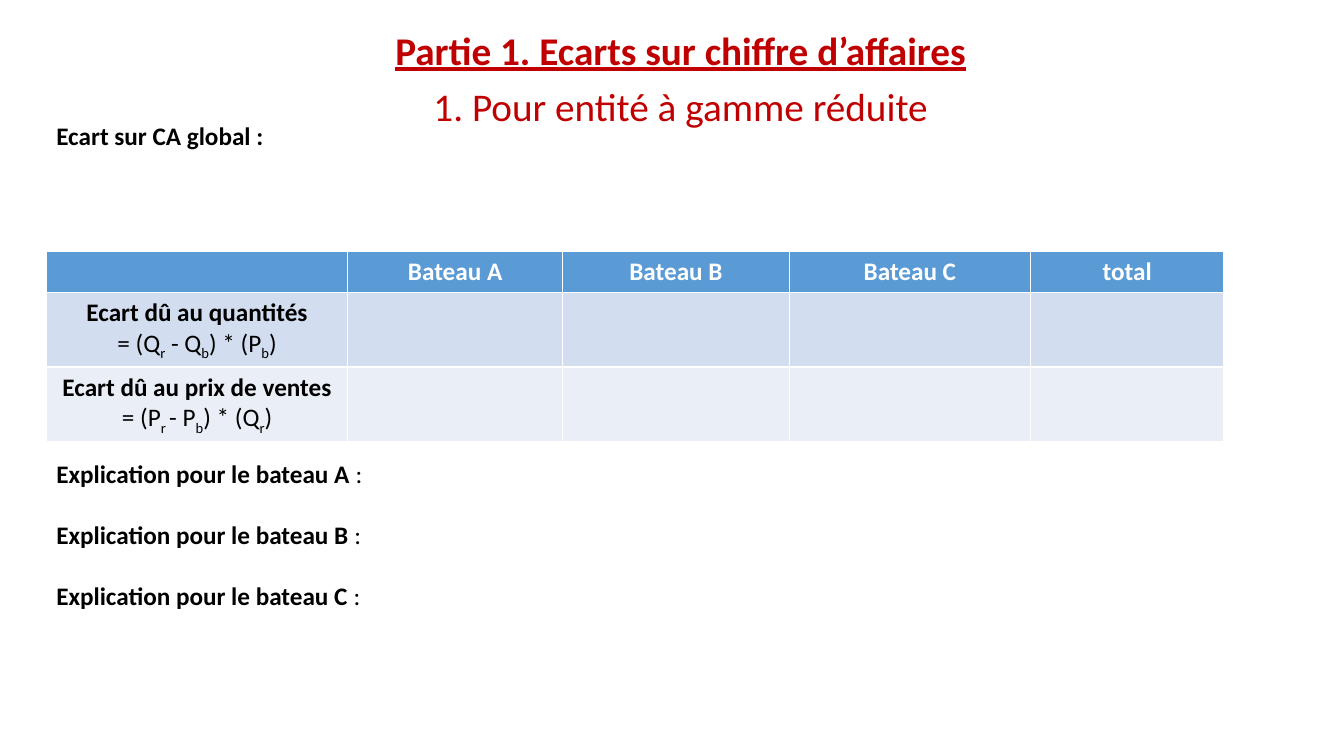
from pptx import Presentation
from pptx.enum.text import MSO_ANCHOR, MSO_AUTO_SIZE, PP_ALIGN
from pptx.dml.color import RGBColor
from pptx.util import Inches, Pt

COLORS = {"title": "C00000", "text": "000000", "header_text": "FFFFFF",
          "header": "5B9BD5", "band_dark": "D2DEEF", "band_light": "EAEFF7"}
LINE = 22  # height in points of one line of 18 pt text
COLUMN_WIDTHS = [2.99, 2.13, 2.25, 2.39, 1.92]
ROW_HEIGHTS = [0.41, 0.74, 0.74]
HEADERS = ["", "Bateau A", "Bateau B", "Bateau C", "total"]

# Each variance: label, then formula pieces alternating normal and subscript
VARIANCES = [
    ("Ecart dû au quantités", ["= (Q", "r", " - Q", "b", ") * (P", "b", ")"]),
    ("Ecart dû au prix de ventes", ["= (P", "r ", "- P", "b", ") * (Q", "r", ")"]),
]


def color(name):
    return RGBColor.from_string(COLORS[name])


def add_span(para, text, size=18, ink="text", subscript=False, **formats):
    span = para.add_run()
    span.text = text
    for key, value in {"name": "Calibri", "size": Pt(size), **formats}.items():
        setattr(span.font, key, value)
    span.font.color.rgb = color(ink)
    if subscript:
        span._r.get_or_add_rPr().set("baseline", "-25000")


def format_para(para, **formats):
    for key, value in formats.items():
        setattr(para, key, value)


def place(shape, box):
    for key, value in zip(("left", "top", "width", "height"), box):
        setattr(shape, key, Inches(value))


def fill_title(page, box):
    title = page.shapes.title
    place(title, box)
    frame = title.text_frame
    frame.word_wrap = True
    frame.auto_size = MSO_AUTO_SIZE.NONE
    frame.vertical_anchor = MSO_ANCHOR.TOP
    lines = [("Partie 1. Ecarts sur chiffre d’affaires", True, 0),
             ("1. Pour entité à gamme réduite", False, 10)]
    for index, (text, strong, gap) in enumerate(lines):
        para = frame.add_paragraph() if index else frame.paragraphs[0]
        format_para(para, alignment=PP_ALIGN.CENTER, line_spacing=0.9, space_before=Pt(gap))
        add_span(para, text, 28, "title", bold=strong, underline=strong)


def add_notes_area(page, box):
    frame = page.shapes.add_textbox(*map(Inches, box)).text_frame
    frame.word_wrap = True
    add_span(frame.paragraphs[0], "Ecart sur CA global :", bold=True)
    # The first explanation starts below the table
    for boat, skipped_lines in (("A", 10), ("B", 1), ("C", 1)):
        para = frame.add_paragraph()
        format_para(para, space_before=Pt(skipped_lines * LINE))
        add_span(para, f"Explication pour le bateau {boat} ", bold=True)
        add_span(para, ":", bold=False)


def add_variance_table(page, box):
    shape = page.shapes.add_table(len(ROW_HEIGHTS), len(COLUMN_WIDTHS), *map(Inches, box))
    table = shape.table
    for column, width in zip(table.columns, COLUMN_WIDTHS):
        column.width = Inches(width)
    for row, height, shade in zip(table.rows, ROW_HEIGHTS, ("header", "band_dark", "band_light")):
        row.height = Inches(height)
        for cell in row.cells:
            cell.fill.solid()
            cell.fill.fore_color.rgb = color(shade)

    # Header row
    for index, text in enumerate(HEADERS):
        if text:
            para = table.cell(0, index).text_frame.paragraphs[0]
            format_para(para, alignment=PP_ALIGN.CENTER)
            add_span(para, text, ink="header_text", bold=True)

    # Labels and formulas in the first column
    for row_index, (label, formula) in enumerate(VARIANCES, 1):
        frame = table.cell(row_index, 0).text_frame
        heading, detail = frame.paragraphs[0], frame.add_paragraph()
        for para in (heading, detail):
            format_para(para, alignment=PP_ALIGN.CENTER)
        add_span(heading, label, bold=True)
        for index, piece in enumerate(formula):
            add_span(detail, piece, subscript=index % 2 == 1, bold=False)


def main():
    deck = Presentation()
    deck.slide_width, deck.slide_height = Inches(13.33), Inches(7.5)
    page = deck.slides.add_slide(deck.slide_layouts[5])
    fill_title(page, (1.75, 0.26, 10, 1.05))
    add_notes_area(page, (0.46, 1.14, 12.21, 5.86))
    add_variance_table(page, (0.46, 2.49, sum(COLUMN_WIDTHS), sum(ROW_HEIGHTS)))
    deck.save("out.pptx")


if __name__ == "__main__":
    main()
